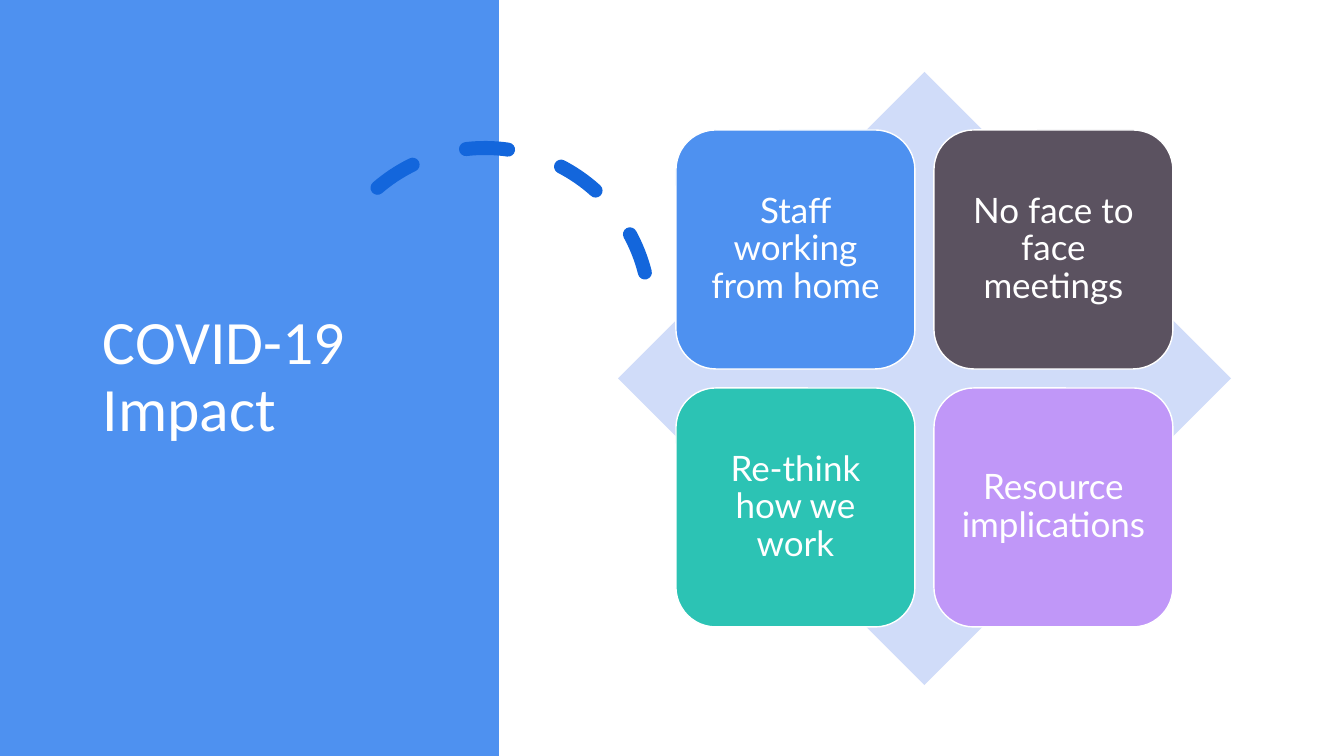
from lxml.etree import SubElement
from pptx import Presentation
from pptx.dml.color import RGBColor
from pptx.enum.dml import MSO_LINE
from pptx.enum.shapes import MSO_SHAPE
from pptx.enum.text import MSO_ANCHOR, MSO_AUTO_SIZE, PP_ALIGN
from pptx.oxml.ns import qn
from pptx.util import Pt

PX = 914400 / 100.8
COLORS = {
    "white": "FFFFFF", "blue": "4E91F0", "arc": "1366DC", "diamond": "D0DCF9",
    "gray": "5B5260", "teal": "2CC3B4", "violet": "C097F8",
}
TILES = [
    ("Staff working from home", "blue"), ("No face to face meetings", "gray"),
    ("Re-think how we work", "teal"), ("Resource implications", "violet"),
]


def px(n):
    return round(n * PX)


def rgb(name):
    return RGBColor.from_string(COLORS[name])


def add_box(shapes, kind, x, y, w, h, fill=None, line=None, width=1):
    sp = shapes.add_shape(kind, px(x), px(y), px(w), px(h))
    sp.shadow.inherit = False
    if fill:
        sp.fill.solid()
        sp.fill.fore_color.rgb = rgb(fill)
    else:
        sp.fill.background()
    if line:
        sp.line.color.rgb = rgb(line)
        sp.line.width = Pt(width)
    else:
        sp.line.fill.background()
    return sp


def set_text(sp, text, size, font, align, inset_x, inset_y, color="white"):
    tf = sp.text_frame
    tf.word_wrap = True
    tf.auto_size = MSO_AUTO_SIZE.NONE
    tf.vertical_anchor = MSO_ANCHOR.MIDDLE
    tf.margin_left = tf.margin_right = px(inset_x)
    tf.margin_top = tf.margin_bottom = px(inset_y)
    p = tf.paragraphs[0]
    p.alignment = align
    p.line_spacing = 0.9
    r = p.add_run()
    r.text = text
    r.font.size = Pt(size)
    r.font.name = font
    r.font.color.rgb = rgb(color)


def add_title_panel(s, x, y, w, h):
    add_box(s.shapes, MSO_SHAPE.RECTANGLE, x, y, w, h, fill="blue")
    title = s.shapes.title
    title.left, title.top = px(x + 93), px(y + 71)
    title.width, title.height = px(w - 173), px(h - 142)
    set_text(title, "COVID-19 Impact", 44, "Calibri", PP_ALIGN.LEFT, 10, 5)
    title.element.getparent().append(title.element)


def add_dashed_arc(s, x, y, size):
    arc = add_box(s.shapes, MSO_SHAPE.ARC, x, y, size, size, line="arc", width=10)
    arc.adjustments[0], arc.adjustments[1] = 146.13, 0
    arc.rotation = 345.8
    arc.line.dash_style = MSO_LINE.DASH
    ln = arc.line._get_or_add_ln()
    ln.set("cap", "rnd")
    SubElement(ln, qn("a:round"))


def add_matrix(s, x, y, size, tile=239, pitch=258):
    shapes = s.shapes.add_group_shape().shapes
    add_box(shapes, MSO_SHAPE.DIAMOND, x, y, size, size, fill="diamond")
    margin = (size - pitch - tile) // 2
    for i, (text, fill) in enumerate(TILES):
        row, col = divmod(i, 2)
        sp = add_box(shapes, MSO_SHAPE.ROUNDED_RECTANGLE,
                     x + margin + col * pitch, y + margin + row * pitch,
                     tile, tile, fill=fill, line="white")
        set_text(sp, text, 25, "Lato", PP_ALIGN.CENTER, 10, 10)


def main():
    prs = Presentation()
    prs.slide_width, prs.slide_height = px(1344), px(756)
    s = prs.slides.add_slide(prs.slide_layouts[5])
    add_title_panel(s, 0, 0, 499, 756)
    add_dashed_arc(s, 320, 148, 330)
    add_matrix(s, 618, 72, 613)
    prs.save("out.pptx")


if __name__ == "__main__":
    main()
